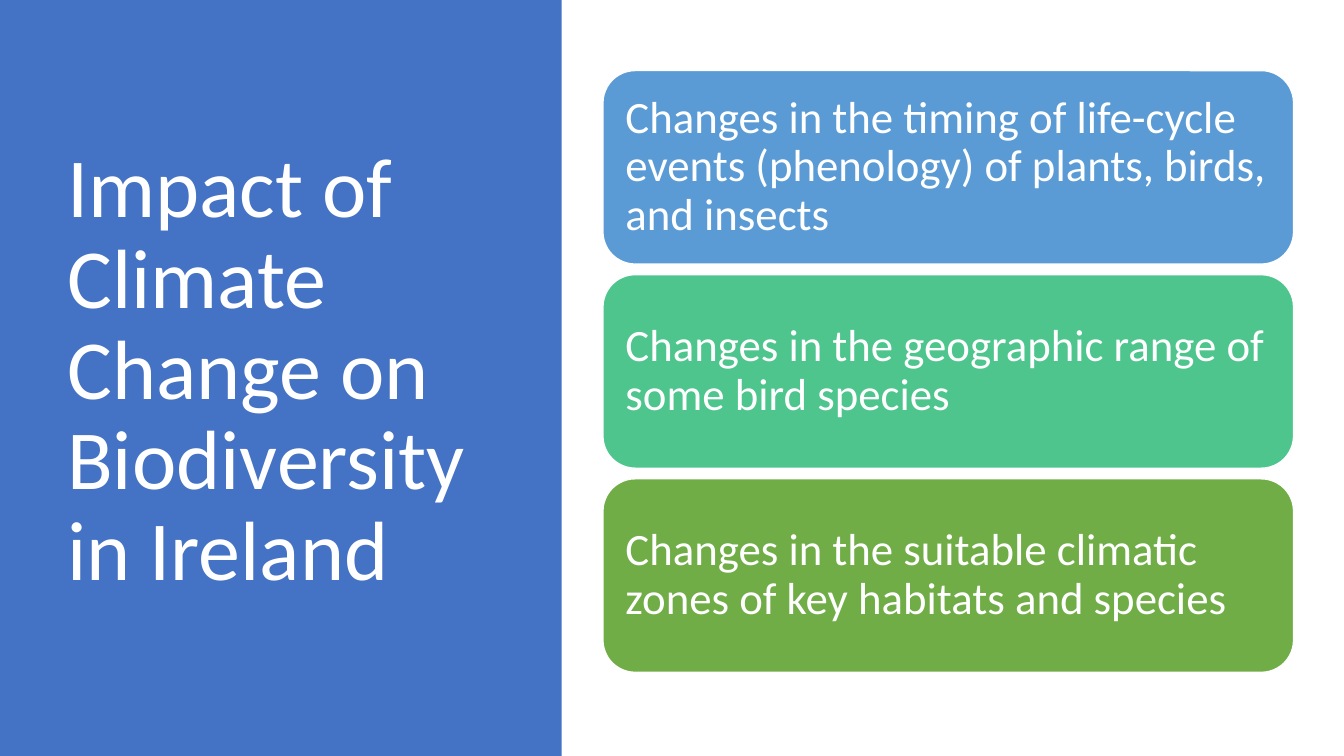
"""Build a slide on the impact of climate change on biodiversity in Ireland."""
from pptx import Presentation
from pptx.dml.color import RGBColor
from pptx.enum.shapes import MSO_SHAPE as Preset
from pptx.enum.text import MSO_ANCHOR as Anchor, PP_ALIGN as Align
from pptx.util import Inches, Pt

WHITE = RGBColor(0xFF, 0xFF, 0xFF)
PANEL_BLUE = RGBColor(0x44, 0x72, 0xC4)
SKY_BLUE = RGBColor(0x5B, 0x9B, 0xD5)
SEA_GREEN = RGBColor(0x4D, 0xC5, 0x8D)
LEAF_GREEN = RGBColor(0x70, 0xAD, 0x47)

TITLE = "Impact of Climate Change on Biodiversity in Ireland"
IMPACTS = [
    ("Changes in the timing of life-cycle events (phenology) of plants, birds, and insects", SKY_BLUE),
    ("Changes in the geographic range of some bird species", SEA_GREEN),
    ("Changes in the suitable climatic zones of key habitats and species", LEAF_GREEN),
]
FIRST_TOP, LAST_TOP = 0.7, 4.75


def apply_format(target, values):
    """Set each named attribute of the target."""
    for name, value in values.items():
        setattr(target, name, value)


def write_text(holder, text, size, inset):
    """Write left-aligned white text, centred vertically."""
    frame = holder.text_frame
    sides = ("margin_left", "margin_top", "margin_right", "margin_bottom")
    apply_format(frame, {"word_wrap": True, "vertical_anchor": Anchor.MIDDLE,
                         **dict(zip(sides, map(Inches, inset)))})
    paragraph = frame.paragraphs[0]
    apply_format(paragraph, {"alignment": Align.LEFT, "line_spacing": 0.9})
    run = paragraph.add_run()
    run.text = text
    apply_format(run.font, {"name": "Calibri", "size": Pt(size)})
    run.font.color.rgb = WHITE


def add_block(slide, preset, box, colour):
    """Add a filled shape without outline or shadow."""
    block = slide.shapes.add_shape(preset, *map(Inches, box))
    block.shadow.inherit = False
    block.fill.solid()
    block.fill.fore_color.rgb = colour
    block.line.fill.background()
    return block


def add_title(slide):
    """Add the slide title over the side panel."""
    title = slide.shapes.add_textbox(*map(Inches, (0.57, 0.68, 4.16, 6.02)))
    write_text(title, TITLE, 60, (0.1, 0.05, 0.1, 0.05))


def add_impact(slide, top, text, colour):
    """Add one rounded card with its impact statement."""
    card = add_block(slide, Preset.ROUNDED_RECTANGLE, (5.98, top, 6.85, 1.92), colour)
    card.line.color.rgb = WHITE
    card.line.width = Pt(1)
    write_text(card, text, 32, (0.13,) * 4)


def main():
    """Assemble and save the slide."""
    deck = Presentation()
    apply_format(deck, {"slide_width": Inches(13.33), "slide_height": Inches(7.5)})
    slide = deck.slides.add_slide(deck.slide_layouts[6])
    add_block(slide, Preset.RECTANGLE, (0, 0, 5.57, 7.5), PANEL_BLUE)
    add_title(slide)
    pitch = (LAST_TOP - FIRST_TOP) / (len(IMPACTS) - 1)
    for row, (text, colour) in enumerate(IMPACTS):
        add_impact(slide, FIRST_TOP + row * pitch, text, colour)
    deck.save("out.pptx")


if __name__ == "__main__":
    main()
